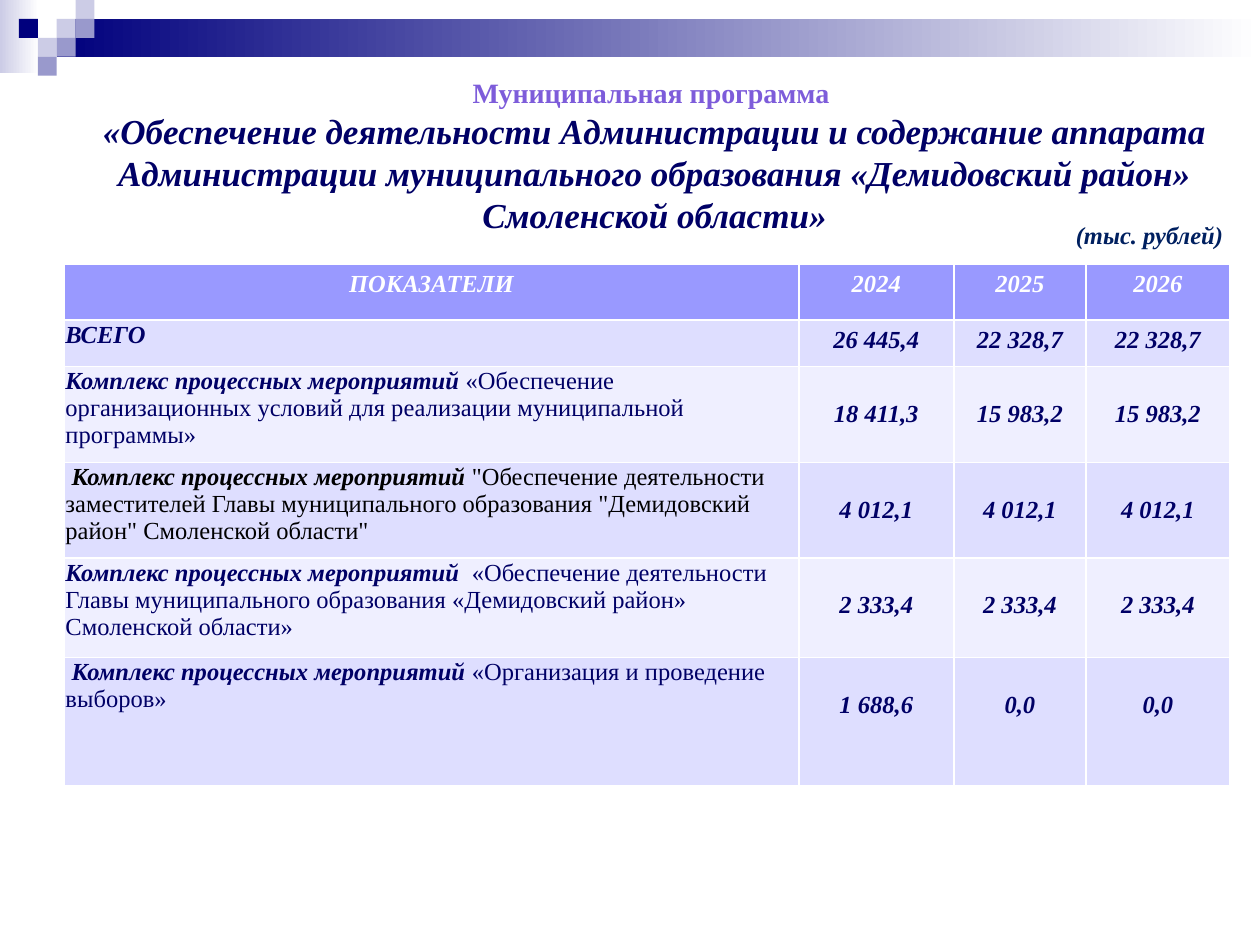
from pptx import Presentation
from pptx.dml.color import RGBColor as RGB
from pptx.enum.shapes import MSO_SHAPE as SHAPE
from pptx.enum.text import MSO_ANCHOR as ANCHOR, MSO_AUTO_SIZE as AUTO, PP_ALIGN as ALIGN
from pptx.util import Inches, Pt

# Content
TITLE = [
    ("Муниципальная программа ", "subtitle"),
    ("«Обеспечение деятельности Администрации и содержание аппарата "
     "Администрации муниципального образования «Демидовский район» "
     "Смоленской области»", "title"),
]
UNITS = "(тыс. рублей)"
HEADER = ["ПОКАЗАТЕЛИ", "2024", "2025", "2026"]
COMPLEX = "Комплекс процессных мероприятий "
# Bold lead, plain text, text style, values by year
ROWS = [
    ("ВСЕГО", "", "ink", ["26 445,4", "22 328,7", "22 328,7"]),
    (COMPLEX, "«Обеспечение организационных условий для реализации муниципальной "
     "программы»", "ink", ["18 411,3", "15 983,2", "15 983,2"]),
    (" " + COMPLEX, '"Обеспечение деятельности заместителей Главы муниципального '
     'образования "Демидовский район" Смоленской области"', "black",
     ["4 012,1", "4 012,1", "4 012,1"]),
    (COMPLEX, " «Обеспечение деятельности Главы муниципального образования "
     "«Демидовский район» Смоленской области»", "ink",
     ["2 333,4", "2 333,4", "2 333,4"]),
    (" " + COMPLEX, "«Организация и проведение выборов»", "ink",
     ["1 688,6", "0,0", "0,0"]),
]

# Theme: text styles as (size, colour, bold, italic)
THEME = {
    "font": "Times New Roman",
    "text": {
        "subtitle": (16, "7D5CDA", True, False),
        "title": (20, "000066", True, True),
        "units": (14, "002060", True, True),
        "header": (14, "FFFFFF", True, True),
        "ink": (14, "000066", True, True),
        "black": (14, "000000", True, True),
    },
    "head_fill": "9999FF",
    "bands": ["DEDEFF", "EFEFFF"],
    "navy": "00007D", "mid": "9999CC", "pale": "CCCCE6", "white": "FFFFFF",
}

# Geometry in inches
COLS = [5.83, 1.23, 1.05, 1.14]
HEIGHTS = [0.44, 0.37, 0.76, 0.76, 0.79, 1.02]
UNIT = 0.15
LINE = 0.22
# Corner squares as (column, row, colour) on the UNIT grid
SQUARES = [(3, 1, "pale"), (4, 0, "pale"), (4, 1, "mid"), (2, 2, "pale"),
           (1, 1, "navy"), (3, 2, "mid"), (2, 3, "mid")]


def add_run(p, text, style, **changes):
    size, colour, bold, italic = THEME["text"][style]
    r = p.add_run()
    r.text = text
    values = {"name": THEME["font"], "size": Pt(size), "bold": bold, "italic": italic}
    for name, value in (values | changes).items():
        setattr(r.font, name, value)
    r.font.color.rgb = RGB.from_string(colour)


def add_rect(s, box, colours):
    sp = s.shapes.add_shape(SHAPE.RECTANGLE, *map(Inches, box))
    sp.shadow.inherit = False
    sp.line.fill.background()
    rgbs = [RGB.from_string(THEME[c]) for c in colours]
    if len(rgbs) == 1:
        sp.fill.solid()
        sp.fill.fore_color.rgb = rgbs[0]
    else:
        sp.fill.gradient()
        sp.fill.gradient_angle = 0
        for stop, rgb in zip(sp.fill.gradient_stops, rgbs):
            stop.color.rgb = rgb


def fill_cell(cell, colour, **margins):
    cell.fill.solid()
    cell.fill.fore_color.rgb = RGB.from_string(colour)
    for side, value in margins.items():
        setattr(cell, f"margin_{side}", Inches(value))
    return cell.text_frame.paragraphs[0]


def main():
    prs = Presentation()
    prs.slide_width, prs.slide_height = Inches(10), Inches(7.5)
    s = prs.slides.add_slide(prs.slide_layouts[5])

    # Top band and corner squares
    add_rect(s, (0, 0, 0.31, 0.58), ["pale", "white"])
    add_rect(s, (3 * UNIT, UNIT, 10 - 3 * UNIT, 2 * UNIT), ["navy", "white"])
    for col, row, colour in SQUARES:
        add_rect(s, (col * UNIT, row * UNIT, UNIT, UNIT), [colour])

    # Title
    title = s.shapes.title
    title.left, title.top, title.width, title.height = map(Inches, (0.35, 0.55, 9.69, 1.38))
    tf = title.text_frame
    tf.auto_size, tf.vertical_anchor, tf.word_wrap = AUTO.NONE, ANCHOR.TOP, True
    for i, (text, style) in enumerate(TITLE):
        p = tf.add_paragraph() if i else tf.paragraphs[0]
        p.alignment = ALIGN.CENTER
        add_run(p, text, style)

    # Table
    table = s.shapes.add_table(len(HEIGHTS), len(COLS), Inches(0.51), Inches(2.1),
                               Inches(sum(COLS)), Inches(sum(HEIGHTS))).table
    for column, width in zip(table.columns, COLS):
        column.width = Inches(width)
    for row, height in zip(table.rows, HEIGHTS):
        row.height = Inches(height)
    for c, text in enumerate(HEADER):
        p = fill_cell(table.cell(0, c), THEME["head_fill"])
        p.alignment = ALIGN.CENTER
        add_run(p, text, "header")
    for i, (lead, text, style, values) in enumerate(ROWS):
        band = THEME["bands"][i % 2]
        p = fill_cell(table.cell(i + 1, 0), band, left=0.01, top=0.01, right=0.01, bottom=0)
        add_run(p, lead, style)
        if text:
            add_run(p, text, style, bold=False, italic=False)
        # Values sit one line lower beside the wrapped descriptions
        top = 0.05 + (LINE if text else 0)
        for c, value in enumerate(values, 1):
            p = fill_cell(table.cell(i + 1, c), band, top=top)
            p.alignment = ALIGN.CENTER
            add_run(p, value, "ink")

    # Units
    tf = s.shapes.add_textbox(*map(Inches, (8.44, 1.7, 1.44, 0.34))).text_frame
    tf.word_wrap = True
    add_run(tf.paragraphs[0], UNITS, "units")

    prs.save("out.pptx")


if __name__ == "__main__":
    main()
